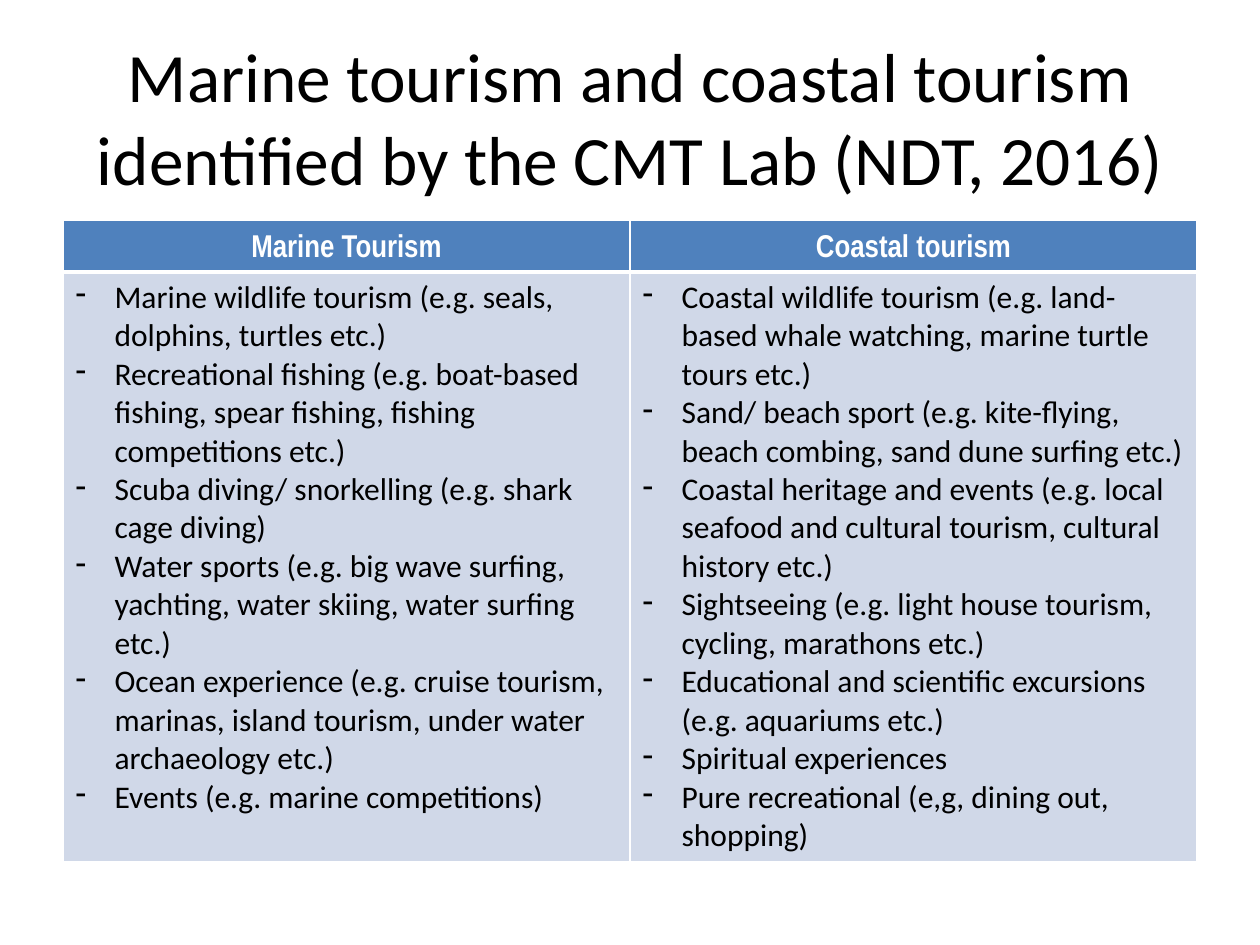
"""Build a slide with a table comparing marine and coastal tourism."""
from dataclasses import dataclass

from lxml import etree
from pptx import Presentation
from pptx.dml.color import RGBColor
from pptx.enum.text import MSO_ANCHOR, MSO_AUTO_SIZE, PP_ALIGN
from pptx.oxml.ns import qn
from pptx.util import Emu, Pt

EMU_PER_PX = 914400 / 126
CENTER = PP_ALIGN.CENTER
MIDDLE = MSO_ANCHOR.MIDDLE
NO_AUTOFIT = MSO_AUTO_SIZE.NONE
TITLE_ONLY = 5

COLORS = {
    "text": "000000",
    "white": "FFFFFF",
    "header": "4F81BD",
    "body": "D0D8E8",
}
TITLE_FONT = {"name": "Calibri", "size": Pt(39.6), "bold": False}
HEADER_FONT = {"name": "Arial Narrow", "size": Pt(18), "bold": True}
ITEM_FONT = {"name": "Calibri", "size": Pt(18), "bold": False}


@dataclass(frozen=True)
class TourismType:
    heading: str
    activities: tuple[str, ...]


TOURISM_TYPES = (
    TourismType("Marine Tourism", (
        "Marine wildlife tourism (e.g. seals, dolphins, turtles etc.)",
        "Recreational fishing (e.g. boat-based fishing, spear fishing, fishing competitions etc.)",
        "Scuba diving/ snorkelling (e.g. shark cage diving)",
        "Water sports (e.g. big wave surfing, yachting, water skiing, water surfing etc.)",
        "Ocean experience (e.g. cruise tourism, marinas, island tourism, "
        "under water archaeology etc.)",
        "Events (e.g. marine competitions)",
    )),
    TourismType("Coastal tourism", (
        "Coastal wildlife tourism (e.g. land-based whale watching, marine turtle tours etc.)",
        "Sand/ beach sport (e.g. kite-flying, beach combing, sand dune surfing etc.)",
        "Coastal heritage and events (e.g. local seafood and cultural tourism, "
        "cultural history etc.)",
        "Sightseeing (e.g. light house tourism, cycling, marathons etc.)",
        "Educational and scientific excursions (e.g. aquariums etc.)",
        "Spiritual experiences",
        "Pure recreational (e,g, dining out, shopping)",
    )),
)


def px(length: int) -> Emu:
    return Emu(round(length * EMU_PER_PX))


def set_attributes(target, values: dict) -> None:
    for name, value in values.items():
        setattr(target, name, value)


def add_text(paragraph, text: str, font: dict, color: str) -> None:
    run = paragraph.add_run()
    run.text = text
    set_attributes(run.font, font)
    run.font.color.rgb = RGBColor.from_string(COLORS[color])


def style_cell(cell, color: str, bottom_width: int) -> None:
    properties = cell._tc.get_or_add_tcPr()
    widths = {"lnL": 1, "lnR": 1, "lnT": 1, "lnB": bottom_width}
    for side, width in widths.items():
        border = etree.SubElement(properties, qn(f"a:{side}"), w=str(Pt(width)))
        fill = etree.SubElement(border, qn("a:solidFill"))
        etree.SubElement(fill, qn("a:srgbClr"), val=COLORS["white"])
    cell.fill.solid()
    cell.fill.fore_color.rgb = RGBColor.from_string(COLORS[color])


def fill_header(cell, heading: str) -> None:
    style_cell(cell, "header", 3)
    set_attributes(cell, {"margin_left": px(9), "margin_right": px(9),
                          "margin_top": 0, "margin_bottom": 0})
    paragraph = cell.text_frame.paragraphs[0]
    set_attributes(paragraph, {"alignment": CENTER, "line_spacing": 1.5})
    add_text(paragraph, heading, HEADER_FONT, "white")


def fill_activities(cell, activities: tuple[str, ...]) -> None:
    style_cell(cell, "body", 1)
    frame = cell.text_frame
    for index, activity in enumerate(activities):
        paragraph = frame.add_paragraph() if index else frame.paragraphs[0]
        properties = paragraph._p.get_or_add_pPr()
        properties.set("marL", str(px(39)))
        properties.set("indent", str(px(-39)))
        etree.SubElement(properties, qn("a:buChar"), char="-")
        add_text(paragraph, activity, ITEM_FONT, "text")


def add_title(slide, text: str) -> None:
    title = slide.shapes.title
    set_attributes(title, {"left": px(63), "top": px(38), "width": px(1134), "height": px(157)})
    frame = title.text_frame
    set_attributes(frame, {"word_wrap": True, "auto_size": NO_AUTOFIT, "vertical_anchor": MIDDLE})
    paragraph = frame.paragraphs[0]
    paragraph.alignment = CENTER
    add_text(paragraph, text, TITLE_FONT, "text")


def add_comparison(slide, tourism_types: tuple[TourismType, ...]) -> None:
    header_height, body_height = 52, 588
    comparison = slide.shapes.add_table(
        2, len(tourism_types), px(63), px(220), px(1134), px(header_height + body_height)
    ).table
    for row, height in zip(comparison.rows, (header_height, body_height)):
        row.height = px(height)
    for column, tourism in enumerate(tourism_types):
        fill_header(comparison.cell(0, column), tourism.heading)
        fill_activities(comparison.cell(1, column), tourism.activities)


def main() -> None:
    presentation = Presentation()
    set_attributes(presentation, {"slide_width": px(1260), "slide_height": px(945)})
    slide = presentation.slides.add_slide(presentation.slide_layouts[TITLE_ONLY])
    add_title(slide, "Marine tourism and coastal tourism identified by the CMT Lab (NDT, 2016)")
    add_comparison(slide, TOURISM_TYPES)
    presentation.save("out.pptx")


if __name__ == "__main__":
    main()
